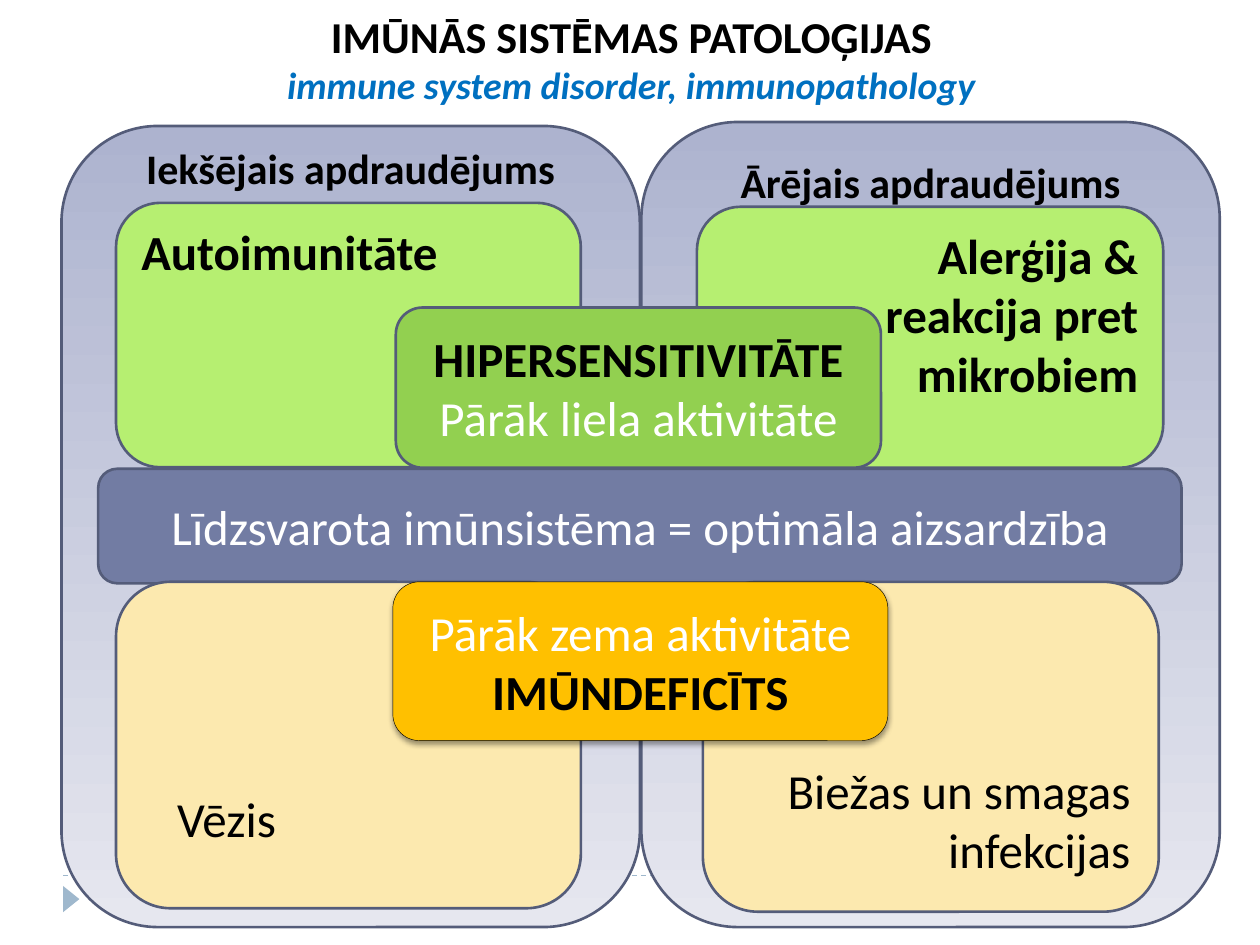
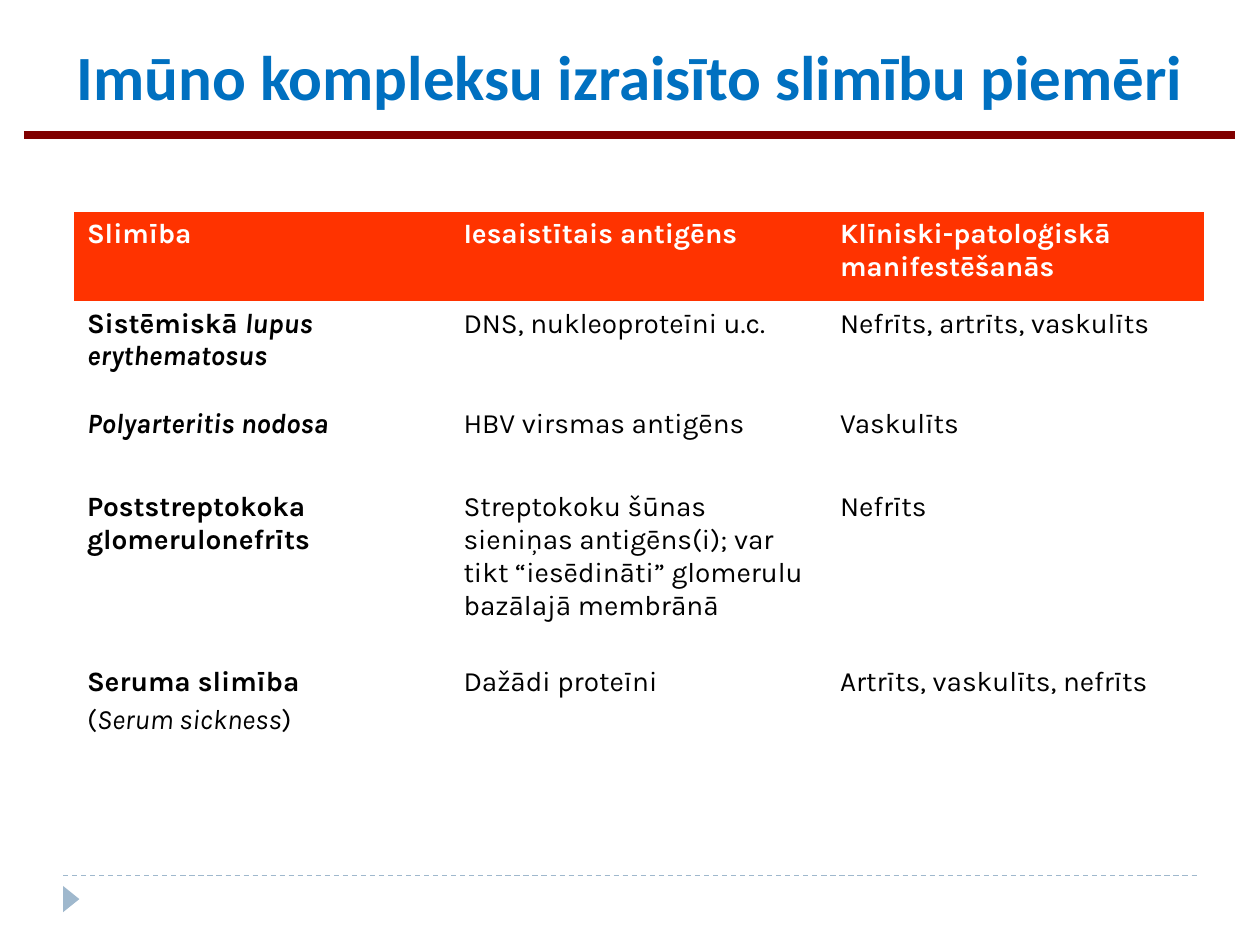
"""Build two slides on immune system disorders and immune complex diseases."""
from lxml.etree import SubElement
from pptx import Presentation
from pptx.dml.color import RGBColor
from pptx.enum.dml import MSO_LINE
from pptx.enum.shapes import MSO_CONNECTOR, MSO_SHAPE
from pptx.enum.text import MSO_ANCHOR, PP_ALIGN
from pptx.oxml.ns import qn
from pptx.util import Cm, Pt

BLACK, WHITE, BLUE, RED = "000000", "FFFFFF", "0070C0", "FF3300"
ACCENT, MAROON, OUTLINE = "9FB8CD", "800000", "545C79"
LIME, CREAM, GREEN, AMBER, SLATE = "B6EF71", "FCE9AF", "92D050", "FFC000", "727CA3"
PANEL_TOP, PANEL_BOTTOM = "ADB3CF", "E6E7EF"
LEFT, CENTER, RIGHT = PP_ALIGN.LEFT, PP_ALIGN.CENTER, PP_ALIGN.RIGHT
TOP, MIDDLE, BOTTOM = MSO_ANCHOR.TOP, MSO_ANCHOR.MIDDLE, MSO_ANCHOR.BOTTOM
BOLD = {"bold": True}
ITALIC = {"italic": True}
rgb = RGBColor.from_string


def write(tf, paras, align=LEFT, gap=0, **base):
    """Write paragraphs, each a list of (text, format) runs."""
    for i, runs in enumerate(paras):
        p = tf.add_paragraph() if i else tf.paragraphs[0]
        p.alignment = align
        if i and gap:
            p.space_before = Pt(gap)
        for text, extra in runs:
            fmt = {"font": "Calibri", "size": 28, "color": BLACK, "bold": False, "italic": False} | base | extra
            r = p.add_run()
            r.text = text
            r.font.name = fmt["font"]
            r.font.size = Pt(fmt["size"])
            r.font.bold = fmt["bold"]
            r.font.italic = fmt["italic"]
            r.font.color.rgb = rgb(fmt["color"])


def add_line(s, x1, x2, y, color, width):
    """Add a horizontal line without shadow."""
    c = s.shapes.add_connector(MSO_CONNECTOR.STRAIGHT, Cm(x1), Cm(y), Cm(x2), Cm(y))
    c.line.color.rgb = rgb(color)
    c.line.width = Pt(width)
    SubElement(c._element.spPr, qn("a:effectLst"))
    return c


prs = Presentation()
prs.slide_width, prs.slide_height = Cm(25.4), Cm(19.05)
slides = [prs.slides.add_slide(prs.slide_layouts[6]) for _ in range(2)]

for s in slides:
    add_line(s, 1.27, 24.13, 17.65, ACCENT, 0.75).line.dash_style = MSO_LINE.DASH
    sp = s.shapes.add_shape(MSO_SHAPE.ISOSCELES_TRIANGLE, Cm(1.17), Cm(17.96), Cm(0.53), Cm(0.33))
    sp.rotation = 90
    sp.shadow.inherit = False
    sp.fill.solid()
    sp.fill.fore_color.rgb = rgb(ACCENT)
    sp.line.fill.background()

s = slides[0]
boxes = [
    ((12.93, 2.46, 11.66, 16.23), None, TOP, CENTER, {},
     [[("Ārējais apdraudējums", BOLD | {"size": 24})]]),
    ((1.24, 2.54, 11.66, 16.15), None, TOP, CENTER, {"margin_top": -0.23},
     [[("Iekšējais apdraudējums", BOLD | {"size": 24})]]),
    ((1.98, 9.45, 21.84, 2.31), SLATE, MIDDLE, CENTER, {},
     [[("Līdzsvarota imūnsistēma = optimāla aizsardzība", {"color": WHITE})]]),
    ((14.05, 4.17, 9.4, 5.26), LIME, TOP, RIGHT, {},
     [[("Alerģija &", BOLD)], [("reakcija pret mikrobiem", BOLD)]]),
    ((14.17, 11.73, 9.19, 6.65), CREAM, BOTTOM, RIGHT, {"margin_bottom": 0.35},
     [[("Biežas un smagas", {})], [("infekcijas", {})]]),
    ((2.34, 4.09, 9.37, 5.33), LIME, TOP, LEFT, {},
     [[("Autoimunitāte", BOLD)]]),
    ((2.34, 11.73, 9.37, 6.58), CREAM, BOTTOM, LEFT, {"margin_bottom": 0.9, "margin_left": 0.91},
     [[("Vēzis", {})]]),
    ((7.92, 11.73, 9.98, 3.2), AMBER, MIDDLE, CENTER, {},
     [[("Pārāk zema aktivitāte", {"color": WHITE})], [("IMŪNDEFICĪTS", BOLD)]]),
    ((7.98, 6.2, 9.78, 3.23), GREEN, MIDDLE, CENTER, {},
     [[("HIPERSENSITIVITĀTE", BOLD)], [("Pārāk liela aktivitāte", {"color": WHITE})]]),
]
for place, color, anchor, align, margins, paras in boxes:
    sp = s.shapes.add_shape(MSO_SHAPE.ROUNDED_RECTANGLE, *map(Cm, place))
    sp.shadow.inherit = False
    sp.line.color.rgb = rgb(OUTLINE)
    sp.line.width = Pt(1.5)
    if color:
        sp.fill.solid()
        sp.fill.fore_color.rgb = rgb(color)
    else:
        sp.fill.gradient()
        sp.fill.gradient_angle = 270
        for stop, shade in zip(sp.fill.gradient_stops, (PANEL_TOP, PANEL_BOTTOM)):
            stop.color.rgb = rgb(shade)
    if color == AMBER:
        sp.line.color.rgb = rgb(BLACK)
        sp.line.width = Pt(0.25)
        effects = sp._element.spPr.find(qn("a:effectLst"))
        shadow = SubElement(effects, qn("a:outerShdw"), blurRad=str(Pt(3)), dist=str(Pt(2)),
                            dir="5400000", rotWithShape="0")
        tint = SubElement(shadow, qn("a:srgbClr"), val=BLACK)
        SubElement(tint, qn("a:alpha"), val="40000")
    tf = sp.text_frame
    tf.word_wrap = True
    tf.vertical_anchor = anchor
    for side, size in margins.items():
        setattr(tf, side, Cm(size))
    write(tf, paras, align)

titles = [
    (slides[0], (1.3, 0.08, 22.86, 2.21), BOTTOM,
     [[("IMŪNĀS SISTĒMAS PATOLOĢIJAS", {"size": 25.2, "color": BLACK})],
      [("immune system disorder, immunopathology", ITALIC | {"size": 21.6})]]),
    (slides[1], (0, 0.64, 25.4, 1.8), TOP,
     [[("Imūno kompleksu izraisīto slimību piemēri", {"size": 36})]]),
]
for s, place, anchor, paras in titles:
    tf = s.shapes.add_textbox(*map(Cm, place)).text_frame
    tf.word_wrap = True
    tf.vertical_anchor = anchor
    write(tf, paras, CENTER, bold=True, color=BLUE)

s = slides[1]
add_line(s, 0.48, 24.89, 2.72, MAROON, 4.5)

HEAD = BOLD | {"color": WHITE}
rows = [
    (1.8, [[("Slimība", HEAD)]], ("Iesaistītais antigēns", HEAD),
     ("Klīniski-patoloģiskā manifestēšanās", HEAD)),
    (2.03, [[("Sistēmiskā ", BOLD), ("lupus erythematosus", BOLD | ITALIC)]],
     ("DNS, nukleoproteīni u.c.", {}), ("Nefrīts, artrīts, vaskulīts", {})),
    (1.68, [[("Polyarteritis nodosa", BOLD | ITALIC)]],
     ("HBV virsmas antigēns", {}), ("Vaskulīts", {})),
    (3.51, [[("Poststreptokoka glomerulonefrīts", BOLD)]],
     ("Streptokoku šūnas sieniņas antigēns(i); var tikt “iesēdināti” glomerulu bazālajā membrānā", {}),
     ("Nefrīts", {})),
    (2.13, [[("Seruma slimība", BOLD)], [("(", {}), ("Serum sickness", ITALIC), (")", {})]],
     ("Dažādi proteīni", {}), ("Artrīts, vaskulīts, nefrīts", {})),
]
table = s.shapes.add_table(len(rows), 3, Cm(1.5), Cm(4.27), Cm(22.77), Cm(11.15)).table
table.horz_banding = False
table.first_row = False
table._tbl.tblPr.find(qn("a:tableStyleId")).text = "{2D5ABB26-0587-4C30-8999-92F81FD0307C}"
for col in table.columns:
    col.width = Cm(7.59)
for i, (height, disease, antigen, signs) in enumerate(rows):
    table.rows[i].height = Cm(height)
    for cell, paras in zip(table.rows[i].cells, (disease, [[antigen]], [[signs]])):
        if i:
            cell.fill.background()
        else:
            cell.fill.solid()
            cell.fill.fore_color.rgb = rgb(RED)
        write(cell.text_frame, paras, gap=3.2, font="Karla", size=16)

prs.save("out.pptx")
